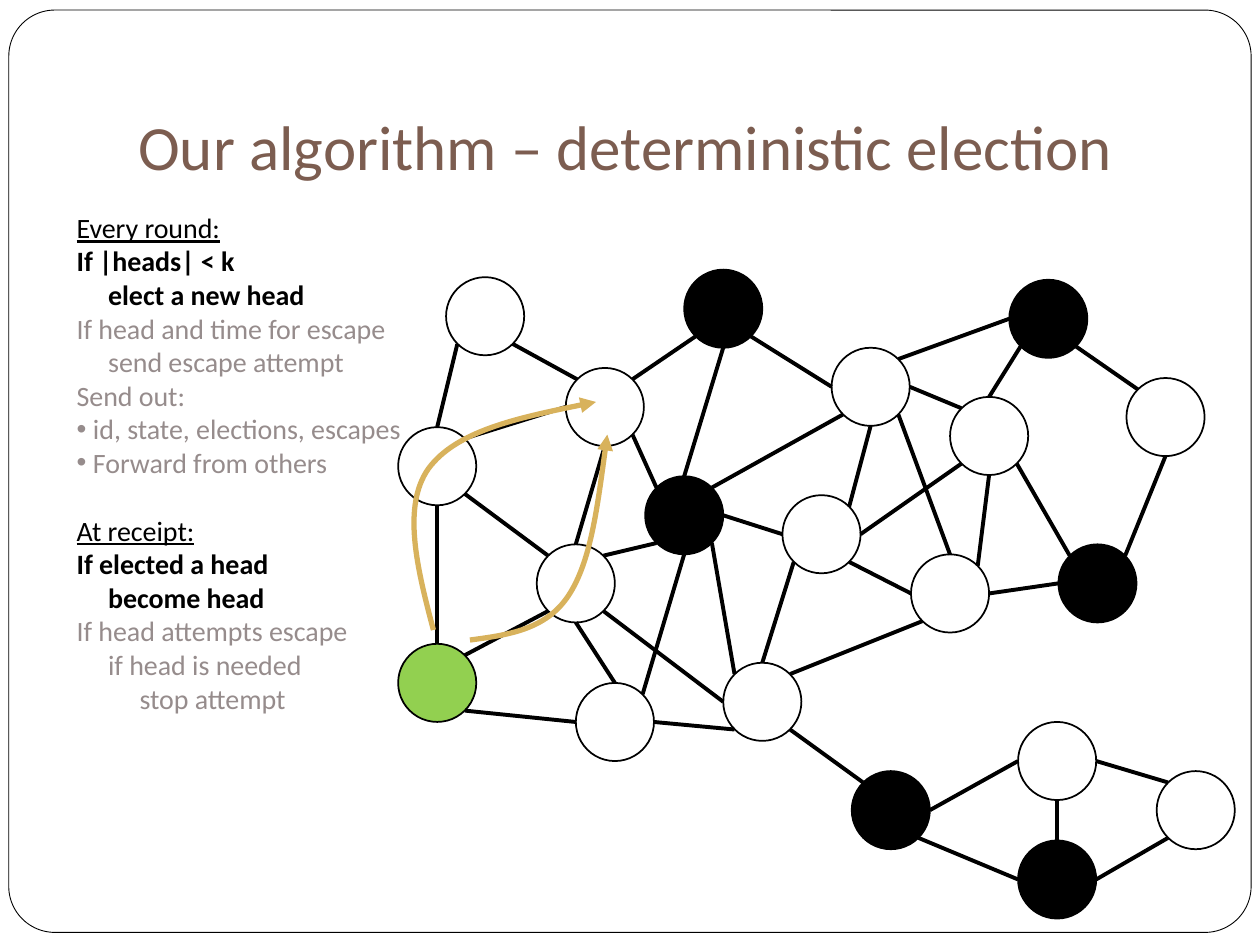
from lxml import etree
from pptx import Presentation
from pptx import util as u
from pptx.dml.color import RGBColor
from pptx.enum import shapes, text
from pptx.oxml import ns

BLACK, WHITE, GREEN, GOLD = "000000", "FFFFFF", "92D050", "D8B25C"
BROWN, GREY = "7C5D50", "968C8C"

NODE_SIZE = 0.62
NODES = {
    "A": (5.12, 3.78, BLACK), "B": (7.54, 3.15, WHITE), "C": (7.23, 4.4, WHITE),
    "D": (4.57, 5.42, WHITE), "E": (5.74, 5.26, WHITE), "F": (4.26, 4.32, WHITE),
    "G": (5.43, 2.14, BLACK), "H": (4.49, 2.92, WHITE), "I": (6.6, 2.76, WHITE),
    "J": (6.76, 6.12, BLACK), "K": (8.4, 4.32, BLACK), "L": (8.08, 6.67, BLACK),
    "M": (9.18, 6.12, WHITE), "N": (8.94, 3, WHITE), "O": (6.21, 3.93, WHITE),
    "P": (3.16, 5.11, GREEN), "Q": (3.16, 3.39, None), "R": (3.54, 2.2, WHITE),
    "S": (8.01, 2.22, BLACK), "T": (8.08, 5.73, WHITE),
}
SITES = {
    "n": (0, -1), "s": (0, 1), "e": (1, 0), "w": (-1, 0),
    "ne": (0.71, -0.71), "nw": (-0.71, -0.71), "se": (0.71, 0.71), "sw": (-0.71, 0.71),
}
EDGES = """
A.e-O.w I.e-B.nw B.n-S.sw G.se-I.w O.ne-I.s H.se-A.nw A.ne-I.sw O.se-C.w
G.s-A.n H.ne-G.sw I.se-C.n B.s-C.ne O.e-B.sw I.ne-S.w P.ne-F.sw P.se-D.w
D.e-E.sw F.s-D.n H.s-F.n F.se-E.w P.n-Q.s Q.se-F.nw E.se-J.nw E.ne-C.sw
D.ne-A.s E.n-O.sw E.nw-A.se F.ne-A.sw Q.ne-H.w L.n-T.s M.sw-L.e H.nw-R.se
Q.n-R.sw M.nw-T.e L.w-J.se J.e-T.w N.s-K.ne S.se-N.nw B.se-K.nw C.e-K.w
""".split()
MESSAGES = [
    [(3.73, 5.08), (4.03, 5.04), (4.33, 5), (4.51, 4.73), (4.69, 4.46), (4.75, 3.95), (4.82, 3.45)],
    [(3.44, 5), (3.31, 4.51), (3.19, 4.02), (3.4, 3.72), (3.62, 3.42), (4.18, 3.3), (4.73, 3.19)],
]
PSEUDOCODE = [
    ("heading", 0, "Every round:"),
    ("active", 0, "If |heads| < k"),
    ("active", 1, "elect a new head"),
    ("muted", 0, "If head and time for escape"),
    ("muted", 1, "send escape attempt"),
    ("muted", 0, "Send out:"),
    ("bullet", 0, "id, state, elections, escapes"),
    ("bullet", 0, "Forward from others"),
    ("heading", 0, "At receipt:"),
    ("active", 0, "If elected a head"),
    ("active", 1, "become head"),
    ("muted", 0, "If head attempts escape"),
    ("muted", 1, "if head is needed"),
    ("muted", 2, "stop attempt"),
]


def rgb(value):
    return RGBColor.from_string(value)


def site(name):
    node, side = name.split(".")
    left, top, _ = NODES[node]
    dx, dy = SITES[side]
    radius = NODE_SIZE / 2
    return left + radius * (1 + dx), top + radius * (1 + dy)


class Deck:
    """Holds the font and the current slide, and draws each kind of element."""

    font = "Calibri"

    def __init__(self, slide):
        self.shapes = slide.shapes

    def shape(self, kind, left, top, width, height, fill, line_width):
        shape = self.shapes.add_shape(kind, *map(u.Inches, (left, top, width, height)))
        shape.shadow.inherit = False
        if fill:
            shape.fill.solid()
            shape.fill.fore_color.rgb = rgb(fill)
        else:
            shape.fill.background()
        shape.line.color.rgb = rgb(BLACK)
        shape.line.width = u.Pt(line_width)
        return shape

    def edge(self, start, end):
        edge = self.shapes.add_connector(
            shapes.MSO_CONNECTOR.STRAIGHT, *map(u.Inches, (*start, *end)))
        edge.line.color.rgb = rgb(BLACK)
        edge.line.width = u.Pt(2.25)
        etree.SubElement(edge._element.spPr, ns.qn("a:effectLst"))

    def curved_arrow(self, points):
        start, *rest = [tuple(map(u.Inches, point)) for point in points]
        builder = self.shapes.build_freeform(*start)
        builder.add_line_segments(rest, close=False)
        arrow = builder.convert_to_shape()
        arrow.shadow.inherit = False
        arrow.fill.background()
        arrow.line.color.rgb = rgb(GOLD)
        arrow.line.width = u.Pt(3)
        segments = list(arrow._element.iter(ns.qn("a:lnTo")))
        outline = segments[0].getparent()
        for first in range(0, len(segments), 3):
            bezier = etree.SubElement(outline, ns.qn("a:cubicBezTo"))
            for segment in segments[first:first + 3]:
                bezier.append(segment[0])
                outline.remove(segment)
        etree.SubElement(arrow.line._get_or_add_ln(), ns.qn("a:tailEnd"), type="triangle")

    def text_frame(self, left, top, width, height):
        frame = self.shapes.add_textbox(*map(u.Inches, (left, top, width, height))).text_frame
        frame.word_wrap = True
        return frame

    def style(self, paragraph, size, color, bold=False, underline=False):
        for run in paragraph.runs:
            run.font.name = self.font
            run.font.size = u.Pt(size)
            run.font.color.rgb = rgb(color)
            run.font.bold = bold
            run.font.underline = underline

    def title(self, wording):
        frame = self.text_frame(1, 0.3, 8.5, 1.25)
        frame.margin_bottom = u.Inches(0.1)
        frame.vertical_anchor = text.MSO_ANCHOR.BOTTOM
        frame.text = wording
        self.style(frame.paragraphs[0], 36, BROWN)

    def pseudocode(self, lines):
        frame = self.text_frame(0.51, 1.62, 3.07, 4.85)
        frame.text = "\n".join(wording for _, _, wording in lines)
        for index, (paragraph, (role, level, _)) in enumerate(zip(frame.paragraphs, lines)):
            color = BLACK if role in ("heading", "active") else GREY
            self.style(paragraph, 16, color, role == "active", role == "heading")
            if role == "heading" and index:
                paragraph.space_before = u.Pt(19.5)
            properties = paragraph._p.get_or_add_pPr()
            hanging = 0.13 if role == "bullet" else 0
            properties.set("marL", str(u.Inches(0.25 * level + hanging)))
            properties.set("indent", str(u.Inches(-hanging)))
            if role == "bullet":
                etree.SubElement(properties, ns.qn("a:buFont"), typeface="Arial")
                etree.SubElement(properties, ns.qn("a:buChar"), char="•")


def main():
    presentation = Presentation()
    presentation.slide_width, presentation.slide_height = u.Inches(10), u.Inches(7.5)
    deck = Deck(presentation.slides.add_slide(presentation.slide_layouts[6]))
    frame = deck.shape(shapes.MSO_SHAPE.ROUNDED_RECTANGLE, 0.07, 0.08, 9.86, 7.32, WHITE, 0.5)
    frame.adjustments[0] = 0.05
    deck.title("Our algorithm – deterministic election")
    for left, top, fill in NODES.values():
        deck.shape(shapes.MSO_SHAPE.FLOWCHART_CONNECTOR, left, top, NODE_SIZE, NODE_SIZE, fill, 1)
    for edge in EDGES:
        deck.edge(*map(site, edge.split("-")))
    for points in MESSAGES:
        deck.curved_arrow(points)
    deck.pseudocode(PSEUDOCODE)
    presentation.save("out.pptx")


if __name__ == "__main__":
    main()
